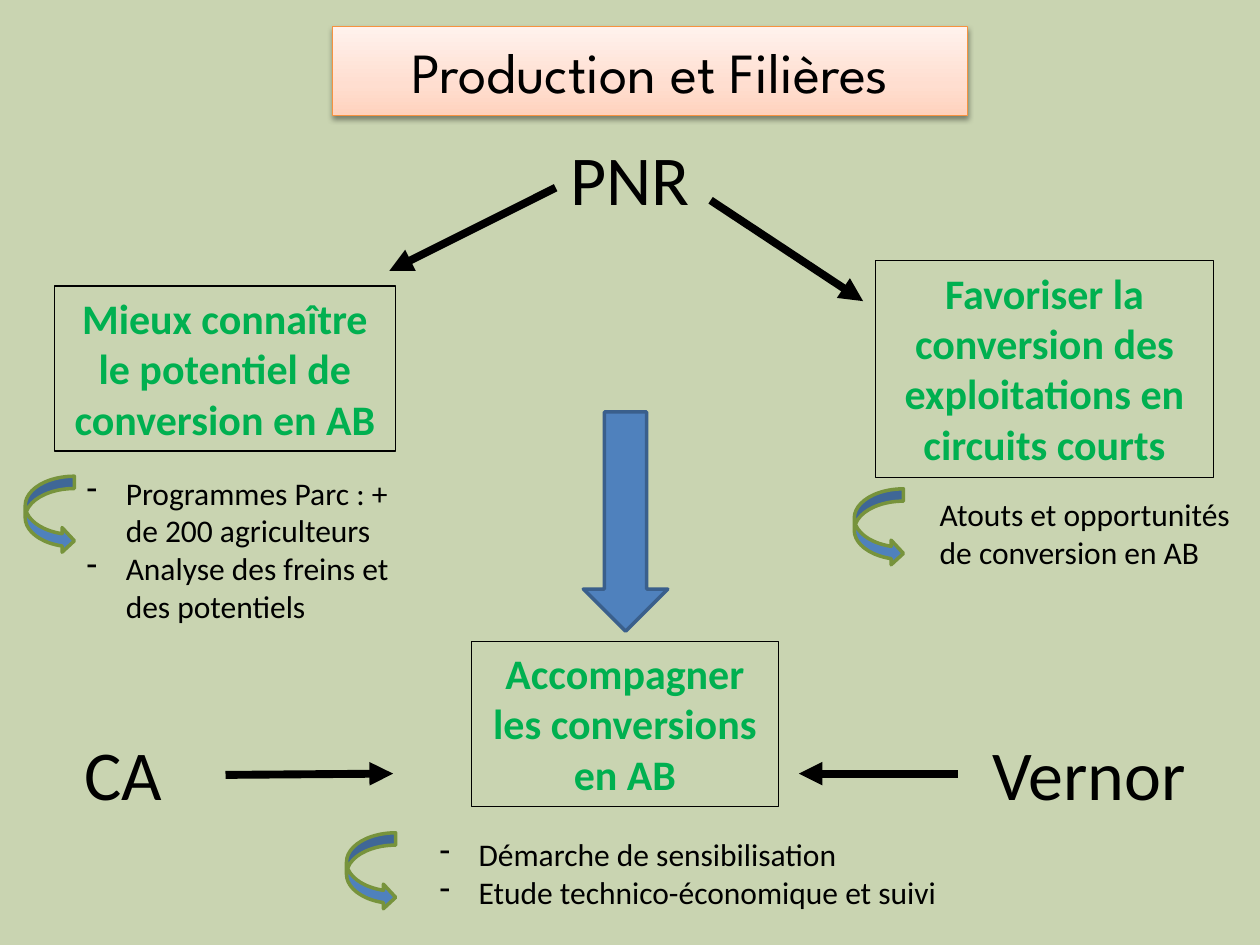
from copy import deepcopy

from lxml import etree
from pptx import Presentation
from pptx import util as u
from pptx.dml.color import RGBColor
from pptx.enum import shapes, text
from pptx.oxml.ns import qn

BACKGROUND = RGBColor(0xC9, 0xD4, 0xB1)
BLACK = RGBColor(0, 0, 0)
GREEN = RGBColor(0x00, 0xB0, 0x50)
OLIVE = RGBColor(0x77, 0x93, 0x3C)
BLUE = RGBColor(0x4F, 0x81, 0xBD)
DARK_BLUE = RGBColor(0x3A, 0x5F, 0x8C)
ORANGE = RGBColor(0xF6, 0x92, 0x40)
PEACH = [(0, RGBColor(0xFF, 0xD2, 0xBD)), (0.35, RGBColor(0xFF, 0xDE, 0xD0)),
         (1, RGBColor(0xFF, 0xF2, 0xED))]

# Grid of 100 columns by 75 rows
COLUMNS, ROWS = 100, 75
WIDTH, HEIGHT = u.Inches(10), u.Inches(7.5)


def grid(col, row):
    return u.Emu(round(WIDTH * col / COLUMNS)), u.Emu(round(HEIGHT * row / ROWS))


def add_run(p, words, size, color=BLACK, bold=False, font="Calibri"):
    r = p.add_run()
    r.text = words
    r.font.name, r.font.size, r.font.bold = font, u.Pt(size), bold
    r.font.color.rgb = color


def add_dash(p):
    pPr = p._p.get_or_add_pPr()
    pPr.set("marL", str(u.Inches(0.31)))
    pPr.set("indent", str(-u.Inches(0.31)))
    etree.SubElement(pPr, qn("a:buFontTx"))
    etree.SubElement(pPr, qn("a:buChar"), char="-")


def set_line(sp, color, points):
    sp.line.color.rgb = color
    sp.line.width = u.Pt(points)


def add_text(s, place, size, paragraphs, points, dashed=False, align=None, **style):
    sp = s.shapes.add_textbox(*grid(*place), *grid(*size))
    tf = sp.text_frame
    tf.word_wrap = True
    tf.auto_size = text.MSO_AUTO_SIZE.SHAPE_TO_FIT_TEXT
    for i, words in enumerate(paragraphs):
        p = tf.add_paragraph() if i else tf.paragraphs[0]
        if align is not None:
            p.alignment = align
        if dashed:
            add_dash(p)
        add_run(p, words, points, **style)
    return sp


def add_goal(s, place, size, words):
    sp = add_text(s, place, size, [words], 24, align=text.PP_ALIGN.CENTER,
                  color=GREEN, bold=True)
    set_line(sp, BLACK, 0.75)


def add_arrow(s, start, end):
    line = s.shapes.add_connector(shapes.MSO_CONNECTOR.STRAIGHT,
                                  *grid(*start), *grid(*end))
    set_line(line, BLACK, 4.5)
    etree.SubElement(line.line._get_or_add_ln(), qn("a:tailEnd"), type="triangle")
    etree.SubElement(line._element.spPr, qn("a:effectLst"))


def add_block_arrow(s, kind, place, size, outline):
    sp = s.shapes.add_shape(kind, *grid(*place), *grid(*size))
    sp.shadow.inherit = False
    sp.fill.solid()
    sp.fill.fore_color.rgb = BLUE
    set_line(sp, outline, 2)


def format_title(sp, words):
    sp.left, sp.top = grid(26.4, 2.1)
    sp.width, sp.height = grid(50.4, 7.1)

    # Three-stop gradient, running upwards
    sp.fill.gradient()
    sp.fill.gradient_angle = 90
    stop_list = sp.fill._fill._gradFill.find(qn("a:gsLst"))
    stop_list.insert(1, deepcopy(stop_list[0]))
    for stop, (position, color) in zip(sp.fill.gradient_stops, PEACH):
        stop.position = position
        stop.color.rgb = color
    set_line(sp, ORANGE, 0.75)

    # Soft shadow below
    effects = etree.SubElement(sp._element.spPr, qn("a:effectLst"))
    shadow = etree.SubElement(effects, qn("a:outerShdw"), blurRad=str(u.Pt(3.1)),
                              dist=str(u.Pt(1.6)), dir="5400000", rotWithShape="0")
    color = etree.SubElement(shadow, qn("a:srgbClr"), val=str(BLACK))
    etree.SubElement(color, qn("a:alpha"), val="38000")

    tf = sp.text_frame
    tf.auto_size = text.MSO_AUTO_SIZE.NONE
    tf.vertical_anchor = text.MSO_ANCHOR.MIDDLE
    p = tf.paragraphs[0]
    p.alignment = text.PP_ALIGN.CENTER
    add_run(p, words, 32.4, font="League Spartan")


def main():
    prs = Presentation()
    prs.slide_width, prs.slide_height = WIDTH, HEIGHT
    s = prs.slides.add_slide(prs.slide_layouts[5])
    s.background.fill.solid()
    s.background.fill.fore_color.rgb = BACKGROUND
    format_title(s.shapes.title, "Production et Filières")

    # Goals
    add_goal(s, (4.3, 22.7), (27.1, 13.1),
             "Mieux connaître le potentiel de conversion en AB")
    add_goal(s, (69.5, 20.7), (26.8, 17.2),
             "Favoriser la conversion des exploitations en circuits courts")
    add_goal(s, (37.4, 50.9), (24.4, 13.1), "Accompagner les conversions en AB")

    # Partners
    for place, name in [((44.3, 10.3), "PNR"), ((5.7, 57.5), "CA"),
                        ((77.8, 57.5), "Vernor")]:
        add_text(s, place, (22.4, 7.7), [name], 40)

    # Arrows from partners to goals
    for start, end in [((44.1, 14.9), (30.9, 21.5)), ((56.4, 15.9), (68.5, 23.9)),
                       ((76, 61.4), (63.4, 61.4)), ((17.9, 61.5), (31.2, 61.4))]:
        add_arrow(s, start, end)

    # Actions under each goal
    add_text(s, (5.9, 37.1), (28, 13.1),
             ["Programmes Parc : + de 200 agriculteurs",
              "Analyse des freins et des potentiels"], 18, dashed=True)
    add_text(s, (73.6, 38.8), (25.5, 7.1),
             ["Atouts et opportunités de conversion en AB"], 18)
    add_text(s, (33.9, 65.8), (41.8, 7.1),
             ["Démarche de sensibilisation",
              "Etude technico-économique et suivi"], 18, dashed=True)
    for place in [(2, 37.8), (67.8, 38.8), (27.5, 66.1)]:
        add_block_arrow(s, shapes.MSO_SHAPE.CURVED_RIGHT_ARROW, place,
                        (3.9, 6.1), OLIVE)

    # Central arrow
    add_block_arrow(s, shapes.MSO_SHAPE.DOWN_ARROW, (46.3, 32.7), (6.7, 17.4),
                    DARK_BLUE)

    prs.save("out.pptx")


if __name__ == "__main__":
    main()
